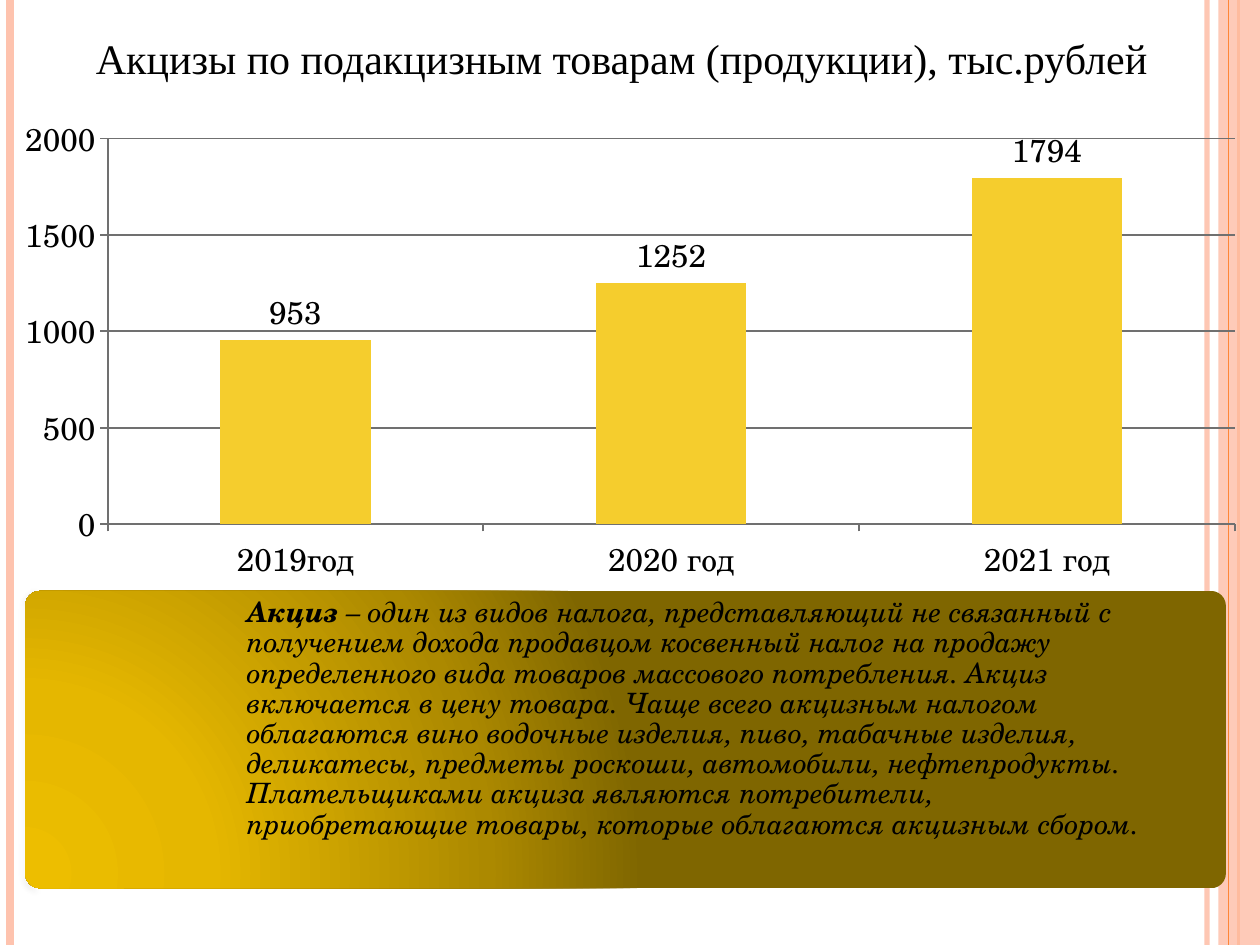
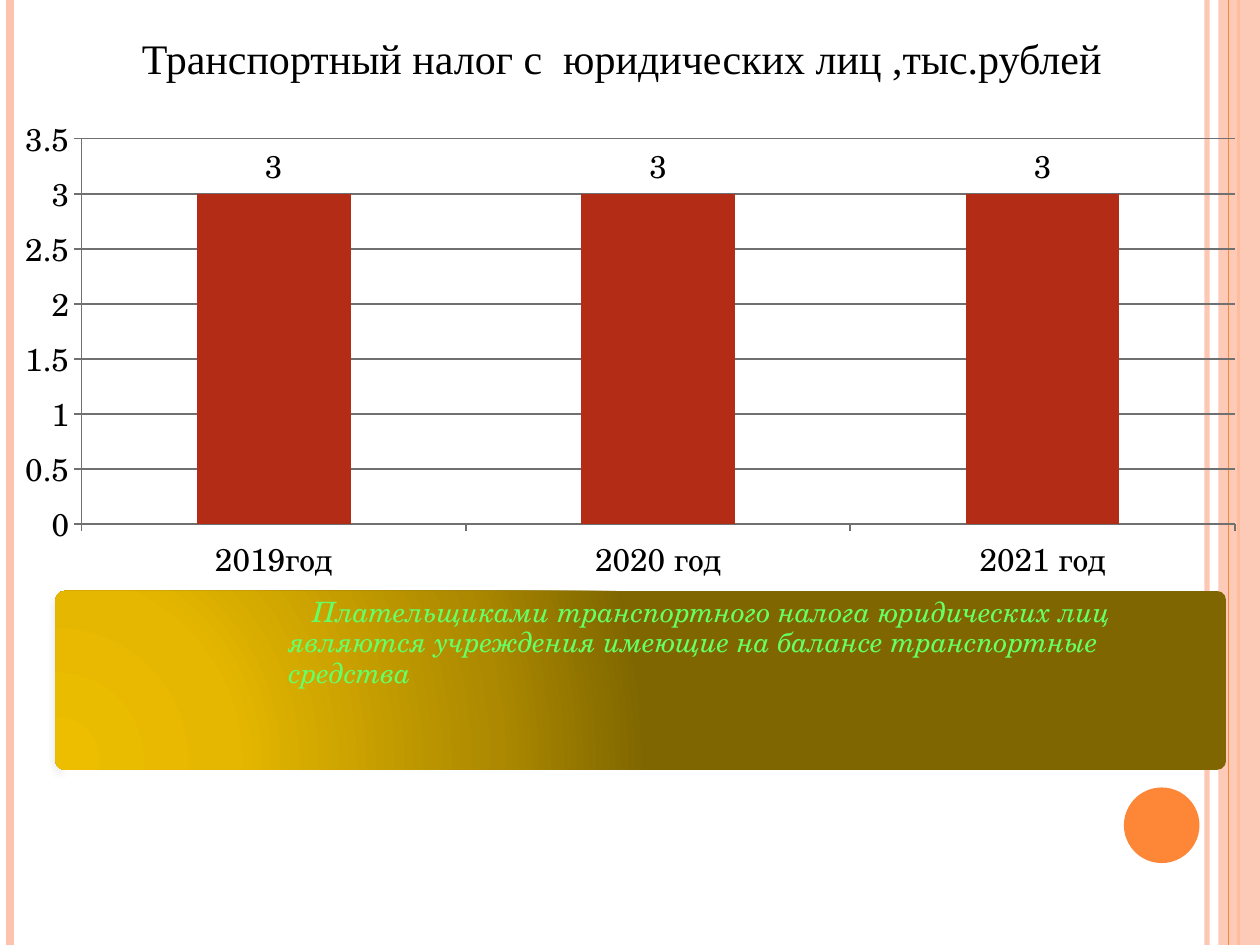
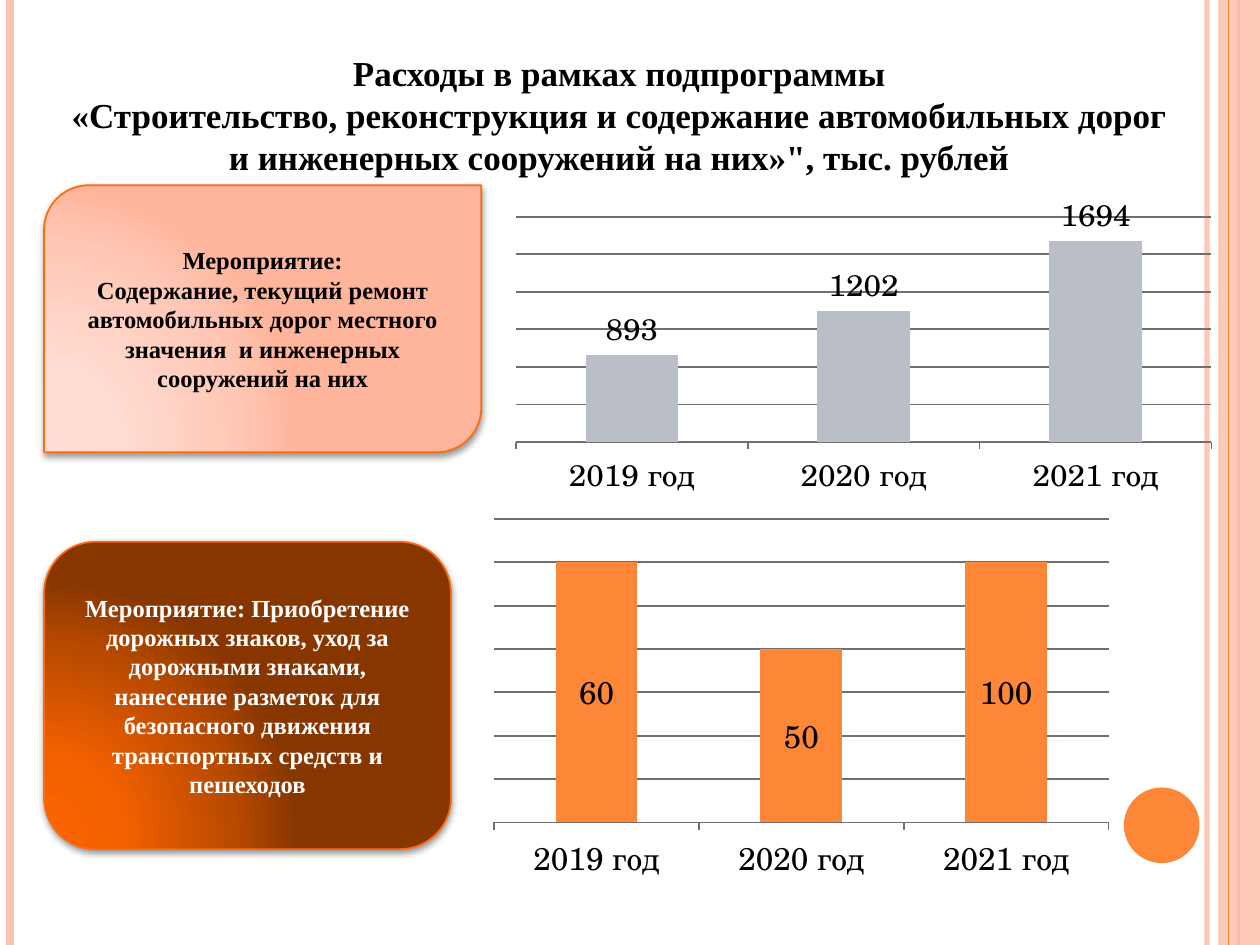
"""Build three slides on excise duty, transport tax and road spending."""
import dataclasses

import lxml.etree
import pptx
import pptx.chart.data
import pptx.dml.color
import pptx.enum.chart
import pptx.enum.shapes
import pptx.enum.text
import pptx.oxml
import pptx.oxml.ns
import pptx.util


@dataclasses.dataclass(frozen=True)
class Theme:
    serif: str = "Times New Roman"
    school: str = "TeX Gyre Schola"
    title: int = 24
    heading: int = 20
    chart: int = 18
    note: int = 16
    event: int = 14
    black: str = "000000"
    white: str = "FFFFFF"
    green: str = "66FF66"
    orange: str = "FE8637"
    peach: str = "FEC3AE"
    edge: str = "FF6B0A"
    yellow: str = "F5CD2D"
    red: str = "B32C16"
    silver: str = "B9BEC7"
    grid: str = "707070"
    gold: tuple = ("EDBE00", "E5B700", "AC8900", "7F6600")
    pink: tuple = ("FFDED5", "FFDBD0", "FFC8B6", "FFB59B")
    rust: tuple = ("FD6400", "F46100", "B74900", "873600")


T = Theme()
PX = 9144
A = 'xmlns:a="http://schemas.openxmlformats.org/drawingml/2006/main"'
RGB = pptx.dml.color.RGBColor.from_string
QN = pptx.oxml.ns.qn
SHAPE = pptx.enum.shapes.MSO_SHAPE
CHART = pptx.enum.chart.XL_CHART_TYPE
LABEL = pptx.enum.chart.XL_LABEL_POSITION
TICK = pptx.enum.chart.XL_TICK_MARK


def write(tf, text, new=False, size=T.chart, font=T.school, color=T.black,
          bold=False, italic=False, center=False, spacing=None, indent=0):
    """Append a run to the last paragraph, or to a new one."""
    p = tf.add_paragraph() if new else tf.paragraphs[-1]
    if center:
        p.alignment = pptx.enum.text.PP_ALIGN.CENTER
    if spacing:
        p.line_spacing = spacing
    if indent:
        p._p.get_or_add_pPr().set("indent", str(indent * PX))
    r = p.add_run()
    r.text = text
    r.font.size = pptx.util.Pt(size)
    r.font.name = font
    r.font.bold = bold
    r.font.italic = italic
    r.font.color.rgb = RGB(color)


prs = pptx.Presentation()
prs.slide_width = 1000 * PX
prs.slide_height = 750 * PX
slides = [prs.slides.add_slide(prs.slide_layouts[6]) for _ in range(3)]
excise, transport, roads = slides

for s in slides:
    for kind, box, color, width, alpha in (
            (None, (958, 0, 958, 750), T.peach, 3, 93),
            (None, (8, 0, 8, 750), T.peach, 4.5, 100),
            (None, (983, 0, 983, 750), T.orange, 1.5, 100),
            (SHAPE.RECTANGLE, (967, 0, 33, 750), T.peach, 0, 87),
            (None, (975, 0, 975, 750), T.orange, 0.75, 100),
            (SHAPE.OVAL, (892, 625, 60, 60), T.orange, 0, 100)):
        box = [v * PX for v in box]
        if kind is None:
            sp = s.shapes.add_connector(pptx.enum.shapes.MSO_CONNECTOR.STRAIGHT, *box)
            sp.line.color.rgb = RGB(color)
            sp.line.width = pptx.util.Pt(width)
            lxml.etree.SubElement(sp._element.spPr, QN("a:effectLst"))
        else:
            sp = s.shapes.add_shape(kind, *box)
            sp.shadow.inherit = False
            sp.fill.solid()
            sp.fill.fore_color.rgb = RGB(color)
            sp.line.fill.background()
        clr = sp._element.spPr.find(".//" + QN("a:srgbClr"))
        lxml.etree.SubElement(clr, QN("a:alpha")).set("val", str(alpha * 1000))

for s, text in ((excise, "Акцизы по подакцизным товарам (продукции), тыс.рублей"),
                (transport, "Транспортный налог с  юридических лиц ,тыс.рублей")):
    tf = s.shapes.add_textbox(27 * PX, 21 * PX, 933 * PX, 51 * PX).text_frame
    tf.word_wrap = True
    write(tf, text, size=T.title, font=T.serif, center=True)

sp = roads.shapes.add_shape(SHAPE.RECTANGLE, 35 * PX, 36 * PX, 913 * PX, 111 * PX)
sp.shadow.inherit = False
sp.fill.solid()
sp.fill.fore_color.rgb = RGB(T.white)
sp.line.fill.background()
tf = sp.text_frame
tf.margin_left = tf.margin_right = 18 * PX
tf.vertical_anchor = pptx.enum.text.MSO_ANCHOR.TOP
for i, text in enumerate((
        "Расходы в рамках подпрограммы",
        "«Строительство, реконструкция и содержание автомобильных дорог "
        "и инженерных сооружений на них»\", тыс. рублей")):
    write(tf, text, new=i > 0, size=T.heading, font=T.serif, bold=True, center=True)

tax_years = ("2019год", "2020 год", "2021 год")
road_years = ("2019 год", "2020 год", "2021 год")
tax_box = (0, 84, 1000, 386)
for s, box, kind, years, values, color, labels, scale in (
        (excise, tax_box, CHART.COLUMN_CLUSTERED, tax_years, (953, 1252, 1794),
         T.yellow, (), (0, 2000, 500)),
        (transport, tax_box, CHART.COLUMN_CLUSTERED, tax_years, (3, 3, 3),
         T.red, (), (0, 3.5, 0.5)),
        (roads, (398, 153, 575, 246), CHART.COLUMN_CLUSTERED, road_years, (816, 875, 968),
         T.silver, ("893", "1202", "1694"), (700, 1000, 50)),
        (roads, (382, 406, 508, 299), CHART.COLUMN_STACKED, road_years, (30, 20, 30),
         T.orange, ("60", "50", "100"), (0, 35, 5))):
    data = pptx.chart.data.CategoryChartData()
    data.categories = years
    data.add_series("Series 1", values)
    chart = s.shapes.add_chart(kind, *(v * PX for v in box), data).chart
    chart.has_legend = False
    chart.has_title = False
    chart.font.size = pptx.util.Pt(T.chart)
    chart.font.name = T.school
    chart.font.color.rgb = RGB(T.black)
    chart._chartSpace.find(QN("c:txPr")).addprevious(pptx.oxml.parse_xml(
        f'<c:spPr xmlns:c="http://schemas.openxmlformats.org/drawingml/2006/chart" {A}>'
        '<a:noFill/><a:ln><a:noFill/></a:ln></c:spPr>'))
    axis = chart.value_axis
    axis.minimum_scale, axis.maximum_scale, axis.major_unit = scale
    axis.has_major_gridlines = True
    axis.visible = not labels
    for a in (axis, chart.category_axis):
        a.major_tick_mark = TICK.OUTSIDE
    for part in (axis.format, axis.major_gridlines.format, chart.category_axis.format):
        part.line.color.rgb = RGB(T.grid)
        part.line.width = pptx.util.Pt(1)
    plot = chart.plots[0]
    plot.vary_by_categories = False
    plot.gap_width = 150
    series = plot.series[0]
    series.format.fill.solid()
    series.format.fill.fore_color.rgb = RGB(color)
    position = LABEL.CENTER if kind == CHART.COLUMN_STACKED else LABEL.OUTSIDE_END
    series.data_labels.show_value = True
    series.data_labels.position = position
    for i, text in enumerate(labels):
        label = series.points[i].data_label
        write(label.text_frame, text)
        label.position = position

panels = []
for s, kind, box, colors, edged, shade in (
        (excise, SHAPE.ROUNDED_RECTANGLE, (20, 469, 953, 236), T.gold, False, (42, 1.6)),
        (transport, SHAPE.ROUNDED_RECTANGLE, (44, 469, 929, 142), T.gold, False, (42, 1.6)),
        (roads, SHAPE.ROUND_2_DIAG_RECTANGLE, (35, 147, 347, 212), T.pink, True, (40, 2)),
        (roads, SHAPE.ROUNDED_RECTANGLE, (35, 430, 323, 244), T.rust, True, (42, 1.6))):
    sp = s.shapes.add_shape(kind, *(v * PX for v in box))
    sp.shadow.inherit = False
    if edged:
        sp.line.color.rgb = RGB(T.edge)
        sp.line.width = pptx.util.Pt(1)
    else:
        sp.adjustments[0] = 0.05
        sp.line.fill.background()
    stops = "".join(f'<a:gs pos="{at}000"><a:srgbClr val="{c}"/></a:gs>'
                    for at, c in zip((0, 30, 75, 100), colors))
    spPr = sp._element.spPr
    spPr.find(QN("a:prstGeom")).addnext(pptx.oxml.parse_xml(
        f'<a:gradFill {A} rotWithShape="1"><a:gsLst>{stops}</a:gsLst><a:path path="circle">'
        '<a:fillToRect l="5000" t="100000" r="120000" b="10000"/></a:path></a:gradFill>'))
    alpha, dist = shade
    spPr.find(QN("a:effectLst")).append(pptx.oxml.parse_xml(
        f'<a:outerShdw {A} blurRad="{pptx.util.Pt(4)}" dist="{pptx.util.Pt(dist)}" '
        f'dir="5400000" rotWithShape="0"><a:srgbClr val="{T.black}">'
        f'<a:alpha val="{alpha}000"/></a:srgbClr></a:outerShdw>'))
    sp.text_frame.vertical_anchor = pptx.enum.text.MSO_ANCHOR.MIDDLE
    panels.append(sp)

notes = []
for s, box in ((excise, (196, 469, 710, 236)), (transport, (229, 469, 692, 142))):
    tf = s.shapes.add_textbox(*(v * PX for v in box)).text_frame
    tf.word_wrap = True
    tf.margin_left = tf.margin_right = tf.margin_bottom = 0
    tf.margin_top = 6 * PX
    notes.append(tf)

note = dict(size=T.note, italic=True, spacing=0.9)
write(notes[0], "Акциз", bold=True, **note)
write(notes[0], " – один из видов налога, представляющий не связанный с получением дохода "
      "продавцом косвенный налог на продажу определенного вида товаров массового потребления. "
      "Акциз включается в цену товара. Чаще всего акцизным налогом облагаются вино водочные "
      "изделия, пиво, табачные изделия, деликатесы, предметы роскоши, автомобили, "
      "нефтепродукты. Плательщиками акциза являются потребители, приобретающие товары, "
      "которые облагаются акцизным сбором.", **note)
write(notes[1], "Плательщиками транспортного налога юридических лиц являются учреждения "
      "имеющие на балансе транспортные средства", color=T.green, indent=19, **note)

event = dict(size=T.event, font=T.serif, bold=True, center=True)
repair, signs = (sp.text_frame for sp in panels[2:])
write(repair, "Мероприятие:", **event)
write(repair, "Содержание, текущий ремонт автомобильных дорог местного значения  "
      "и инженерных сооружений на них", new=True, **event)
write(signs, "Мероприятие: Приобретение дорожных знаков, уход за дорожными знаками, нанесение "
      "разметок для безопасного движения транспортных средств и пешеходов",
      color=T.white, **event)

prs.save("out.pptx")
